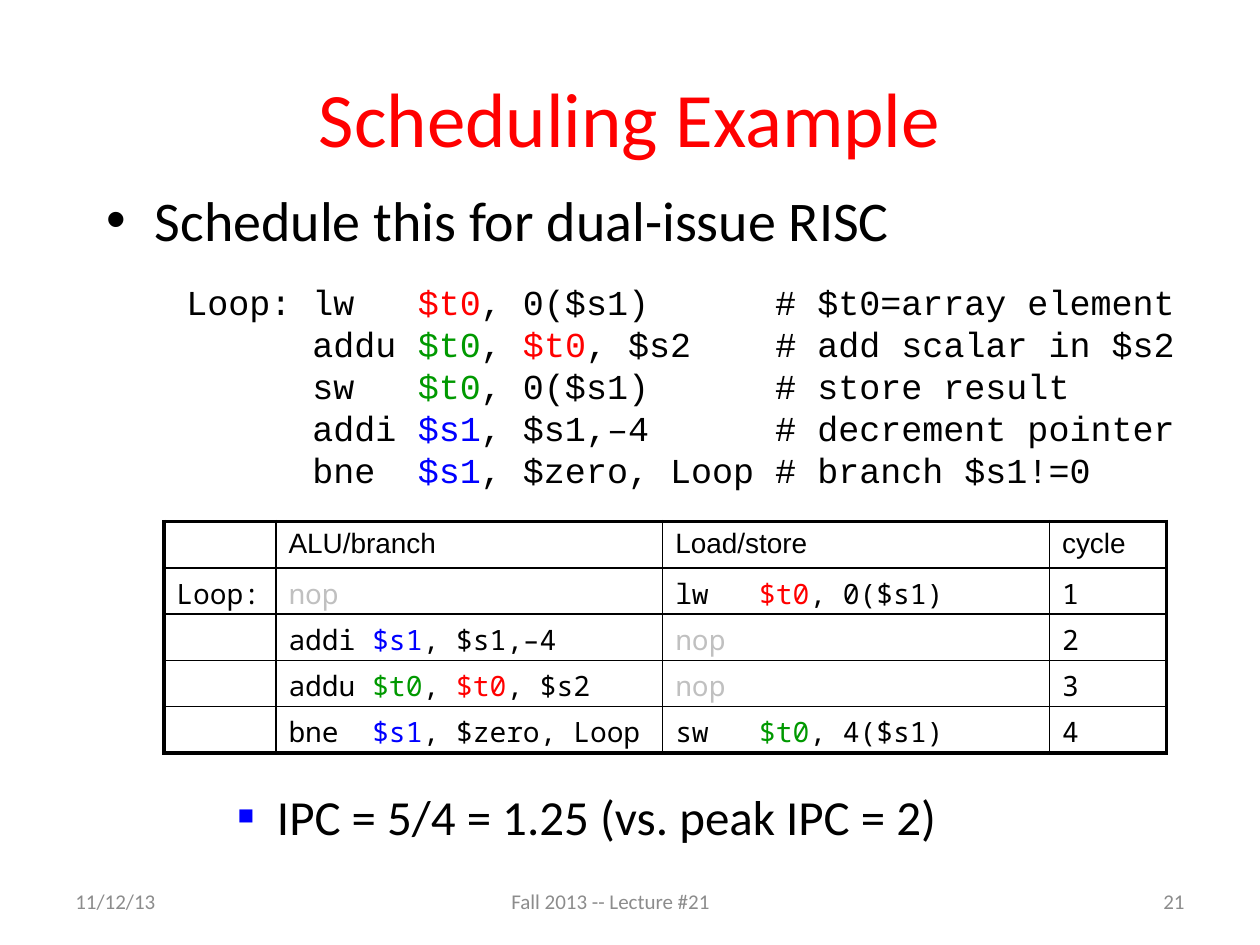
from lxml.etree import SubElement
from pptx import Presentation
from pptx.dml.color import RGBColor
from pptx.enum.text import MSO_ANCHOR, PP_ALIGN
from pptx.oxml import parse_xml
from pptx.oxml.ns import nsdecls, qn
from pptx.util import Inches, Pt

BLACK = RGBColor(0x00, 0x00, 0x00)
RED = RGBColor(0xFF, 0x00, 0x00)
GREEN = RGBColor(0x00, 0x99, 0x00)
BLUE = RGBColor(0x00, 0x00, 0xFF)
SILVER = RGBColor(0xC0, 0xC0, 0xC0)
GRAY = RGBColor(0x8C, 0x8C, 0x8C)
TINTS = {"r": RED, "g": GREEN, "b": BLUE, "s": SILVER}

# Content: |r...| marks a coloured part, its first letter is a key of TINTS
TITLE = "Scheduling Example"
TASK = "Schedule this for dual-issue RISC"
CODE = [
    "Loop: lw   |r$t0|, 0($s1)      # $t0=array element",
    "      addu |g$t0|, |r$t0|, $s2    # add scalar in $s2",
    "      sw   |g$t0|, 0($s1)      # store result",
    "      addi |b$s1|, $s1,–4      # decrement pointer",
    "      bne  |b$s1|, $zero, Loop # branch $s1!=0",
]
ROWS = [
    ("", "ALU/branch", "Load/store", "cycle"),
    ("Loop:", "|snop|", "lw   |r$t0|, 0($s1)", "1"),
    ("", "addi |b$s1|, $s1,–4", "|snop|", "2"),
    ("", "addu |g$t0|, |r$t0|, $s2", "|snop|", "3"),
    ("", "bne  |b$s1|, $zero, Loop", "sw   |g$t0|, 4($s1)", "4"),
]
RESULT = "IPC = 5/4 = 1.25 (vs. peak IPC = 2)"
FOOTER = [
    (0.5, "11/12/13", PP_ALIGN.LEFT),
    (3.96, "Fall 2013 -- Lecture #21", PP_ALIGN.LEFT),
    (7.17, "21", PP_ALIGN.RIGHT),
]

# Table measures: widths in inches, rules in points
COLS = [0.89, 3.07, 3.07, 0.93]
ROW_H = 1.83 / len(ROWS)
UPRIGHT = [2.25, 1, 1, 1, 2.25]
LEVEL = [2.25, 1.5, 1, 1, 1, 2.25]


def write(par, lines, font, size, color=BLACK):
    for num, line in enumerate(lines):
        if num:
            par.add_line_break()
        for i, part in enumerate(line.split("|")):
            if not part:
                continue
            run = par.add_run()
            run.text = part[1:] if i % 2 else part
            run.font.name, run.font.size = font, Pt(size)
            run.font.color.rgb = TINTS[part[0]] if i % 2 else color


def add_text(slide, box, lines, font, size, color=BLACK, wrap=True):
    frame = slide.shapes.add_textbox(*map(Inches, box)).text_frame
    frame.word_wrap = wrap
    write(frame.paragraphs[0], lines, font, size, color)
    return frame


def add_bullet(par, char, font, left, hang, color, scale):
    props = par._p.get_or_add_pPr()
    props.set("marL", str(Inches(left)))
    props.set("indent", str(-Inches(hang)))
    tint = SubElement(props, qn("a:buClr"))
    SubElement(tint, qn("a:srgbClr"), val=str(color))
    SubElement(props, qn("a:buSzPct"), val=str(scale * 1000))
    SubElement(props, qn("a:buFont"), typeface=font)
    SubElement(props, qn("a:buChar"), char=char)


def add_rule(cell, side, width):
    cell._tc.get_or_add_tcPr().append(parse_xml(
        f'<a:ln{side} {nsdecls("a")} w="{Pt(width)}"><a:solidFill>'
        f'<a:srgbClr val="{BLACK}"/></a:solidFill></a:ln{side}>'))


def add_grid(slide):
    size = sum(COLS), ROW_H * len(ROWS)
    table = slide.shapes.add_table(
        len(ROWS), len(COLS), *map(Inches, (1.3, 4.14, *size))).table
    table.first_row = table.horz_banding = False
    for col, width in zip(table.columns, COLS):
        col.width = Inches(width)
    for r, texts in enumerate(ROWS):
        table.rows[r].height = Inches(ROW_H)
        for c, text in enumerate(texts):
            cell = table.cell(r, c)
            par = cell.text_frame.paragraphs[0]
            write(par, [text], "Noto Sans Mono" if r else "Arial", 16)
            if not text:
                SubElement(par._p, qn("a:endParaRPr"), sz="1600")
            add_rule(cell, "L", UPRIGHT[c])
            add_rule(cell, "R", UPRIGHT[c + 1])
            add_rule(cell, "T", LEVEL[r])
            add_rule(cell, "B", LEVEL[r + 1])
            cell.fill.background()


def main():
    deck = Presentation()
    deck.slide_width, deck.slide_height = Inches(10), Inches(7.5)
    slide = deck.slides.add_slide(deck.slide_layouts[5])

    # Title
    title = slide.shapes.title
    title.left, title.top = Inches(0.5), Inches(0.3)
    title.width, title.height = Inches(9), Inches(1.25)
    title.text_frame.vertical_anchor = MSO_ANCHOR.MIDDLE
    par = title.text_frame.paragraphs[0]
    par.alignment = PP_ALIGN.CENTER
    write(par, [TITLE], "Calibri", 44, RED)

    # Task, code, schedule and result
    task = add_text(slide, (0.75, 1.42, 9.05, 0.76), [TASK], "Calibri", 32)
    add_bullet(task.paragraphs[0], "•", "Arial", 0.38, 0.38, BLACK, 100)
    add_text(slide, (1.38, 2.18, 8.15, 1.78), CODE, "Courier New", 20,
             wrap=False)
    add_grid(slide)
    result = add_text(slide, (1.29, 6.19, 8.5, 0.71), [RESULT], "Calibri", 28)
    add_bullet(result.paragraphs[0], "■", "Arial", 0.81, 0.31, BLUE, 55)

    # Footer
    for left, text, align in FOOTER:
        foot = add_text(slide, (left, 6.95, 2.33, 0.4), [text], "Calibri", 12,
                        GRAY)
        foot.vertical_anchor = MSO_ANCHOR.MIDDLE
        foot.paragraphs[0].alignment = align

    deck.save("out.pptx")


if __name__ == "__main__":
    main()
